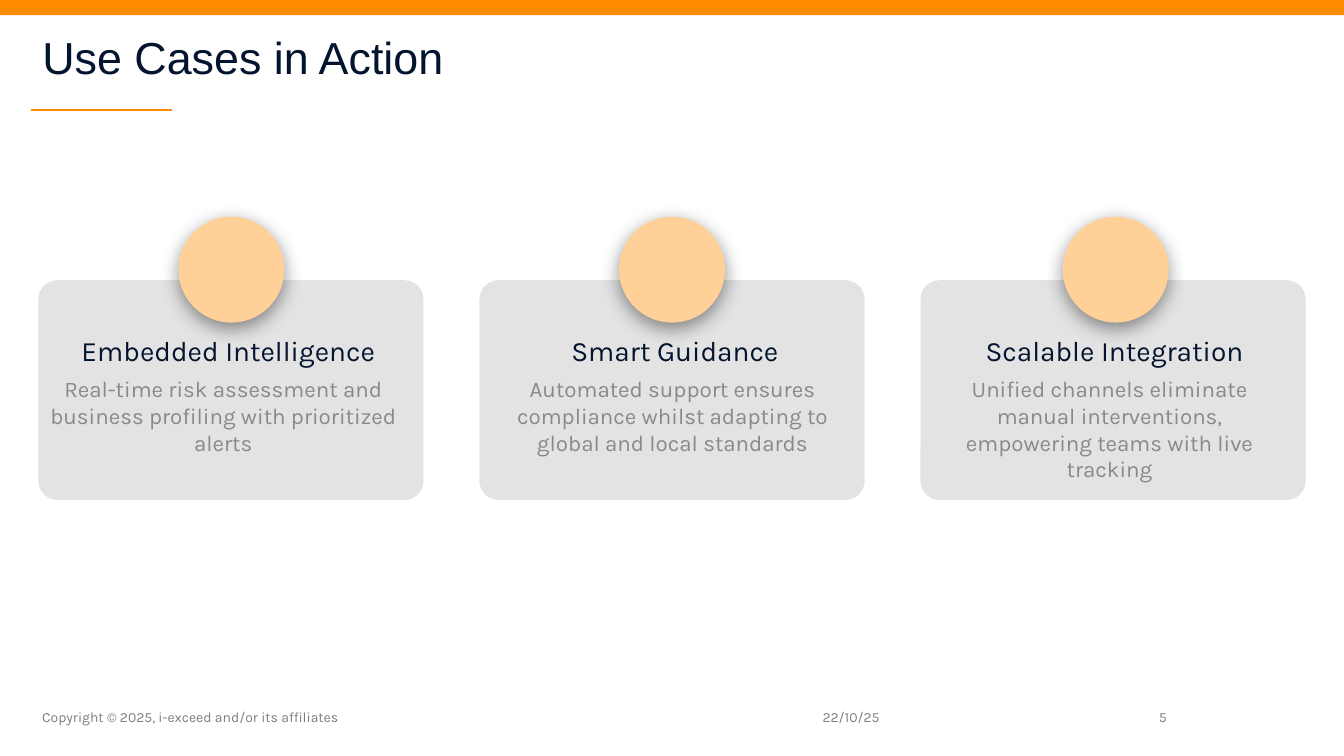
import pptx
import pptx.util
import pptx.oxml
import pptx.dml.color
from dataclasses import dataclass
from pptx.enum.shapes import MSO_CONNECTOR, MSO_SHAPE
from pptx.enum.text import MSO_ANCHOR, MSO_AUTO_SIZE, PP_ALIGN
from pptx.util import Inches


@dataclass(frozen=True)
class Theme:
    orange: str = "FF8C00"
    peach: str = "FFD199"
    navy: str = "03142E"
    card: str = "E3E3E3"
    body: str = "898989"
    muted: str = "7E7E7E"
    heading_font: str = "Arial"
    text_font: str = "Karla"
    title_size: int = 32
    heading_size: int = 20
    body_size: int = 16
    footer_size: int = 10


T = Theme()
SHADOW = (
    '<a:effectLst xmlns:a="http://schemas.openxmlformats.org/drawingml/2006/main">'
    '<a:outerShdw blurRad="175260" dist="50800" dir="5400000" algn="t" rotWithShape="0">'
    '<a:srgbClr val="000000"><a:alpha val="43000"/></a:srgbClr>'
    '</a:outerShdw></a:effectLst>'
)


def write(sp, text, size, color, font=T.text_font, align=PP_ALIGN.LEFT,
          anchor=MSO_ANCHOR.TOP, wrap=True, side_inset=0.1, after=0, spacing=1.0):
    tf = sp.text_frame
    tf.word_wrap = wrap
    tf.auto_size = MSO_AUTO_SIZE.NONE
    tf.vertical_anchor = anchor
    tf.margin_left = tf.margin_right = Inches(side_inset)
    tf.margin_top = tf.margin_bottom = Inches(0.05)
    p = tf.paragraphs[0]
    p.alignment = align
    p.line_spacing = spacing
    p.space_before = pptx.util.Pt(0)
    p.space_after = pptx.util.Pt(after)
    r = p.add_run()
    r.text = text
    r.font.name = font
    r.font.size = pptx.util.Pt(size)
    r.font.color.rgb = pptx.dml.color.RGBColor.from_string(color)


def add_filled(s, kind, left, top, width, height, color):
    sp = s.shapes.add_shape(kind, Inches(left), Inches(top), Inches(width), Inches(height))
    sp.shadow.inherit = False
    sp.fill.solid()
    sp.fill.fore_color.rgb = pptx.dml.color.RGBColor.from_string(color)
    sp.line.fill.background()
    return sp


prs = pptx.Presentation()
prs.slide_width, prs.slide_height = Inches(13.33), Inches(7.5)
s = prs.slides.add_slide(prs.slide_layouts[5])

# Top band, title and its underline
add_filled(s, MSO_SHAPE.RECTANGLE, 0, 0, 13.33, 0.15, T.orange)
underline = s.shapes.add_connector(MSO_CONNECTOR.STRAIGHT, Inches(0.31), Inches(1.09),
                                   Inches(1.71), Inches(1.09))
underline.line.color.rgb = pptx.dml.color.RGBColor.from_string(T.orange)
underline.line.width = pptx.util.Pt(1.5)
underline._element.spPr.append(pptx.oxml.parse_xml(SHADOW[:SHADOW.index(">")] + "/>"))

title = s.shapes.title
title.left, title.top, title.width, title.height = map(Inches, (0.32, 0.15, 12.7, 0.74))
write(title, "Use Cases in Action", T.title_size, T.navy, font=T.heading_font,
      anchor=MSO_ANCHOR.BOTTOM, spacing=0.9)

# Footer
for text, left, width, align in (
    ("22/10/25", 8.06, 1.68, PP_ALIGN.LEFT),
    ("Copyright © 2025, i-exceed and/or its affiliates", 0.32, 6.84, PP_ALIGN.LEFT),
    ("5", 10.65, 1.02, PP_ALIGN.RIGHT),
):
    box = s.shapes.add_textbox(Inches(left), Inches(6.85), Inches(width), Inches(0.4))
    write(box, text, T.footer_size, T.muted, align=align, anchor=MSO_ANCHOR.BOTTOM)

# Cards: heading, body, then (left, width) of heading and body, and left of circle
use_cases = (
    ("Embedded Intelligence",
     "Real-time risk assessment and business profiling with prioritized alerts",
     (0.79, 2.95), (0.38, 3.67), 1.77),
    ("Smart Guidance",
     "Automated support ensures compliance whilst adapting to global and local standards",
     (5.18, 3.03), (5.0, 3.34), 6.14),
    ("Scalable Integration",
     "Unified channels eliminate manual interventions, empowering teams with live tracking",
     (9.57, 2.97), (9.17, 3.67), 10.54),
)
for i, (heading, body, (head_x, head_w), (body_x, body_w), circle_x) in enumerate(use_cases):
    card = add_filled(s, MSO_SHAPE.ROUNDED_RECTANGLE, 0.38 + 4.375 * i, 2.78, 3.82, 2.18, T.card)
    card.adjustments[0] = 0.087
    box = s.shapes.add_textbox(Inches(body_x), Inches(3.67), Inches(body_w), Inches(0.91))
    write(box, body, T.body_size, T.body, align=PP_ALIGN.CENTER)
    box = s.shapes.add_textbox(Inches(head_x), Inches(3.26), Inches(head_w), Inches(0.43))
    write(box, heading, T.heading_size, T.navy, align=PP_ALIGN.CENTER, wrap=False,
          side_inset=0, after=12)
    circle = add_filled(s, MSO_SHAPE.OVAL, circle_x, 2.15, 1.05, 1.05, T.peach)
    circle.shadow.inherit = True
    circle._element.spPr.append(pptx.oxml.parse_xml(SHADOW))

prs.save("out.pptx")
